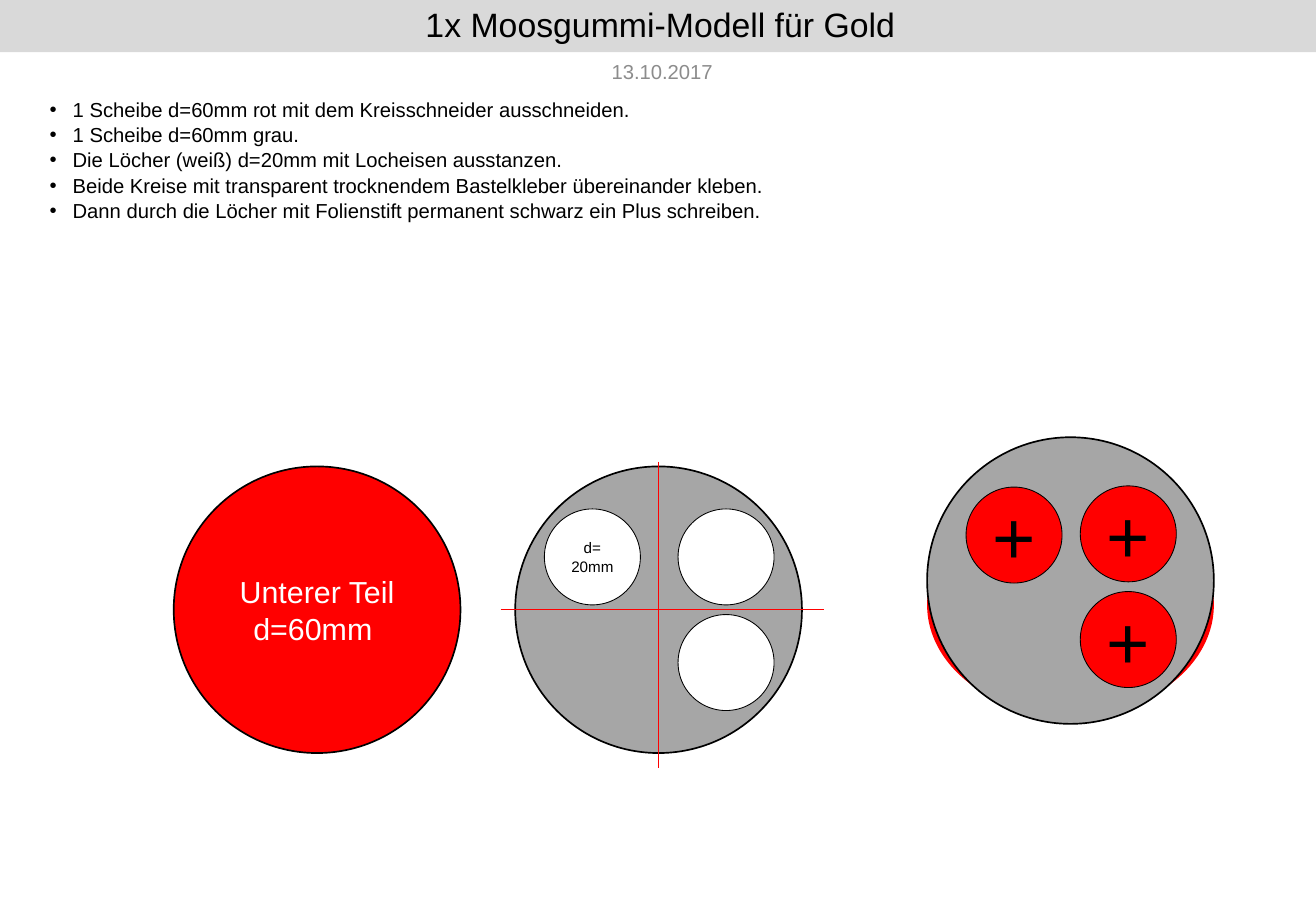
from lxml.etree import SubElement
from pptx import Presentation
from pptx.dml.color import RGBColor
from pptx.enum.shapes import MSO_CONNECTOR, MSO_SHAPE
from pptx.enum.text import MSO_ANCHOR, PP_ALIGN
from pptx.oxml.ns import qn
from pptx.util import Inches, Pt

BLACK, WHITE, RED, GRAY = "000000", "FFFFFF", "FF0000", "A6A6A6"
DISC, HOLE = 2.36, 0.79


def color(value):
    return RGBColor.from_string(value)


class Sheet:
    font_name = "Arial"

    def __init__(self, presentation):
        self.slide = presentation.slides.add_slide(presentation.slide_layouts[5])

    def place(self, shape, left, top, width, height):
        shape.left, shape.top = Inches(left), Inches(top)
        shape.width, shape.height = Inches(width), Inches(height)

    def fill_text(self, frame, text, size, text_color, align=PP_ALIGN.CENTER, anchor=MSO_ANCHOR.MIDDLE):
        frame.text = text
        frame.word_wrap = True
        frame.vertical_anchor = anchor
        for paragraph in frame.paragraphs:
            paragraph.alignment = align
            paragraph.font.name = self.font_name
            paragraph.font.size = Pt(size)
            paragraph.font.color.rgb = color(text_color)

    def title(self, text):
        shape = self.slide.shapes.title
        self.place(shape, 0, 0, 10.87, 0.43)
        shape.fill.solid()
        shape.fill.fore_color.rgb = color("D9D9D9")
        self.fill_text(shape.text_frame, text, 20, BLACK)
        shape.text_frame.paragraphs[0].line_spacing = 0.9

    def text(self, text, left, top, width, height, text_color, **layout):
        shape = self.slide.shapes.add_textbox(0, 0, 0, 0)
        self.place(shape, left, top, width, height)
        self.fill_text(shape.text_frame, text, 12, text_color, **layout)
        return shape.text_frame

    def bullets(self, lines, left, top, width, height):
        frame = self.text("\n".join(lines), left, top, width, height, BLACK,
                          align=PP_ALIGN.LEFT, anchor=MSO_ANCHOR.TOP)
        for paragraph in frame.paragraphs:
            paragraph.space_after = Pt(0.6)
            properties = paragraph._p.get_or_add_pPr()
            properties.set("marL", str(Inches(0.19)))
            properties.set("indent", str(-Inches(0.19)))
            bullet_font = SubElement(properties, qn("a:buFont"))
            bullet_font.set("typeface", self.font_name)
            bullet = SubElement(properties, qn("a:buChar"))
            bullet.set("char", "•")
            properties.extend(properties.findall(qn("a:defRPr")))

    def group(self):
        return self.slide.shapes.add_group_shape().shapes

    def ellipse(self, left, top, width, height, fill, line=1, shapes=None,
                text="", size=18, text_color=BLACK):
        if shapes is None:
            shapes = self.slide.shapes
        shape = shapes.add_shape(MSO_SHAPE.OVAL, Inches(left), Inches(top),
                                 Inches(width), Inches(height))
        shape.shadow.inherit = False
        shape.fill.solid()
        shape.fill.fore_color.rgb = color(fill)
        if line:
            shape.line.color.rgb = color(BLACK)
            shape.line.width = Pt(line)
        else:
            shape.line.fill.background()
        if text:
            frame = shape.text_frame
            frame.margin_left = frame.margin_right = 0
            frame.margin_top = frame.margin_bottom = 0
            self.fill_text(frame, text, size, text_color)

    def punched_disc(self, left, top, holes, fill, size):
        shapes = self.group()
        self.ellipse(left, top, DISC, DISC, GRAY, shapes=shapes)
        for hole_left, hole_top, text in holes:
            self.ellipse(hole_left, hole_top, HOLE, HOLE, fill, 0.5, shapes, text, size)

    def line(self, start_x, start_y, end_x, end_y):
        connector = self.slide.shapes.add_connector(
            MSO_CONNECTOR.STRAIGHT, Inches(start_x), Inches(start_y), Inches(end_x), Inches(end_y))
        connector.line.color.rgb = color(RED)
        connector.line.width = Pt(0.5)
        SubElement(connector._element.spPr, qn("a:effectLst"))


def main():
    presentation = Presentation()
    presentation.slide_width = Inches(10.83)
    presentation.slide_height = Inches(7.5)
    sheet = Sheet(presentation)

    sheet.title("1x Moosgummi-Modell für Gold")
    sheet.text("13.10.2017", 4.8, 0.43, 1.3, 0.31, "8C8C8C")
    sheet.bullets([
        "1 Scheibe d=60mm rot mit dem Kreisschneider ausschneiden.",
        "1 Scheibe d=60mm grau.",
        "Die Löcher (weiß) d=20mm mit Locheisen ausstanzen.",
        "Beide Kreise mit transparent trocknendem Bastelkleber übereinander kleben.",
        "Dann durch die Löcher mit Folienstift permanent schwarz ein Plus schreiben.",
    ], 0.31, 0.75, 10.24, 0.79)

    sheet.ellipse(1.43, 3.84, DISC, DISC, RED, text="Unterer Teil\nd=60mm ", text_color=WHITE)
    sheet.ellipse(7.63, 4.07, DISC, 1.82, RED, line=0)
    sheet.punched_disc(4.24, 3.84, [
        (4.48, 4.19, "d=\v20mm"), (5.58, 4.19, ""), (5.58, 5.06, ""),
    ], WHITE, 9)
    sheet.punched_disc(7.63, 3.6, [
        (7.95, 4.01, "+"), (8.89, 4, "+"), (8.89, 4.87, "+"),
    ], RED, 44)
    sheet.line(5.42, 3.8, 5.42, 6.32)
    sheet.line(4.12, 5.02, 6.78, 5.02)

    presentation.save("out.pptx")


if __name__ == "__main__":
    main()
